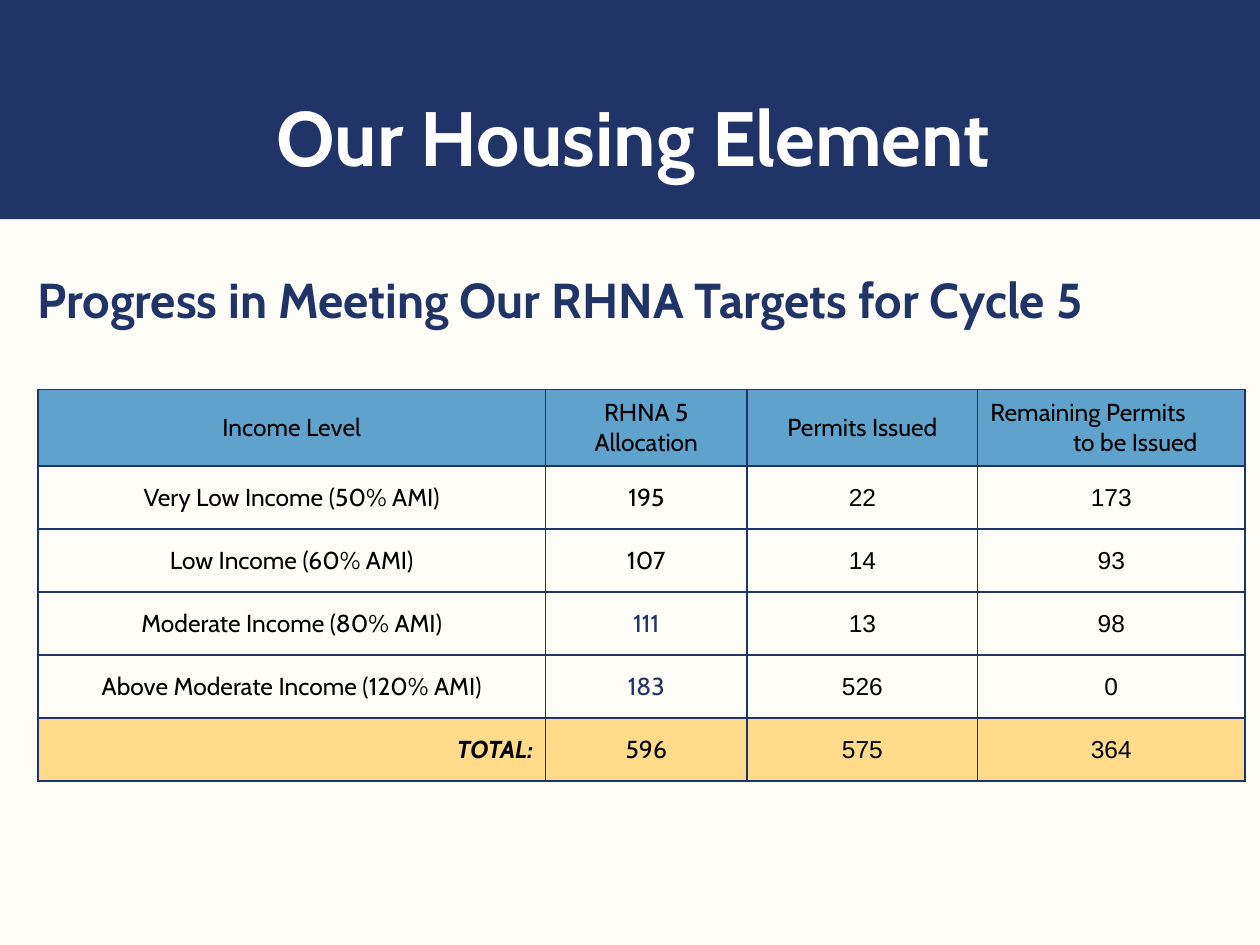
from dataclasses import dataclass

from lxml import etree
from pptx import Presentation
from pptx import util as u
from pptx.dml.color import RGBColor
from pptx.enum import shapes, text
from pptx.oxml import ns

NAVY, CREAM, WHITE, BLACK = "203468", "FFFDF7", "FFFFFF", "000000"
BLUE, YELLOW = "5FA3CC", "FFDB8A"
LEFT, CENTER, RIGHT = (text.PP_ALIGN.LEFT, text.PP_ALIGN.CENTER,
                       text.PP_ALIGN.RIGHT)


@dataclass
class Line:
    words: str
    size: float = 14
    font: str = "Cabin"
    color: str = BLACK
    bold: bool = False
    italic: bool = False
    align: text.PP_ALIGN = CENTER
    spacing: float = 1.0
    indent: float = 0


@dataclass
class Box:
    left: float
    top: float
    width: float
    height: float
    line: Line
    anchor: text.MSO_ANCHOR = text.MSO_ANCHOR.TOP
    right_inset: float = 0.1


@dataclass
class Row:
    label: Line
    allocation: Line
    issued: str
    remaining: str
    fill: str = ""


def color(value: str) -> RGBColor:
    return RGBColor.from_string(value)


def write(frame, lines: list[Line]) -> None:
    for index, line in enumerate(lines):
        paragraph = frame.paragraphs[0] if index == 0 else frame.add_paragraph()
        if line.indent:
            paragraph._p.get_or_add_pPr().set("marL", str(u.Inches(line.indent)))
        paragraph.alignment = line.align
        paragraph.line_spacing = line.spacing
        run = paragraph.add_run()
        run.text = line.words
        formats = {"name": line.font, "size": u.Pt(line.size),
                   "bold": line.bold, "italic": line.italic}
        for name, value in formats.items():
            setattr(run.font, name, value)
        run.font.color.rgb = color(line.color)


def add_text(slide, box: Box) -> None:
    shape = slide.shapes.add_textbox(*map(
        u.Inches, (box.left, box.top, box.width, box.height)))
    frame = shape.text_frame
    frame.word_wrap = True
    frame.vertical_anchor = box.anchor
    frame.margin_right = u.Inches(box.right_inset)
    write(frame, [box.line])


def add_borders(cell) -> None:
    properties = cell._tc.get_or_add_tcPr()
    for position, side in enumerate(("lnL", "lnR", "lnT", "lnB")):
        border = etree.Element(ns.qn(f"a:{side}"), w=str(u.Pt(1)))
        fill = etree.SubElement(border, ns.qn("a:solidFill"))
        etree.SubElement(fill, ns.qn("a:srgbClr"), val=NAVY)
        properties.insert(position, border)


def fill_cell(cell, lines: list[Line], fill: str) -> None:
    cell.vertical_anchor = text.MSO_ANCHOR.MIDDLE
    write(cell.text_frame, lines)
    if fill:
        cell.fill.solid()
        cell.fill.fore_color.rgb = color(fill)
    else:
        cell.fill.background()
    add_borders(cell)


def add_progress_table(slide, header: list[list[Line]], rows: list[Row]) -> None:
    widths = [4.03, 1.6, 1.83, 2.12]
    heights = [0.61] + [0.5] * len(rows)
    table = slide.shapes.add_table(
        len(heights), len(widths), u.Inches(0.3), u.Inches(3.09),
        u.Inches(sum(widths)), u.Inches(sum(heights))).table
    for column, width in zip(table.columns, widths):
        column.width = u.Inches(width)
    for row, height in zip(table.rows, heights):
        row.height = u.Inches(height)

    for index, lines in enumerate(header):
        fill_cell(table.cell(0, index), lines, BLUE)
    for number, row in enumerate(rows, start=1):
        entries = [row.label, row.allocation,
                   Line(row.issued, font="Arial"), Line(row.remaining, font="Arial")]
        for index, entry in enumerate(entries):
            fill_cell(table.cell(number, index), [entry], row.fill)


TITLE = Box(0.45, 0.33, 9.31, 1.17,
            Line("Our Housing Element", 44, color=WHITE, bold=True, spacing=0.9),
            text.MSO_ANCHOR.BOTTOM, right_inset=0.25)
SUBTITLE = Box(0.2, 2.14, 9.8, 4.78,
               Line("Progress in Meeting Our RHNA Targets for Cycle 5", 28,
                    color=NAVY, bold=True, align=LEFT, spacing=0.9))
HEADER = [
    [Line("Income Level")],
    [Line("RHNA 5"), Line("Allocation")],
    [Line("Permits Issued")],
    [Line("Remaining Permits", align=LEFT), Line("to be Issued", indent=0.38)],
]
ROWS = [
    Row(Line("Very Low Income (50% AMI)"), Line("195"), "22", "173"),
    Row(Line("Low Income (60% AMI)"), Line("107"), "14", "93"),
    Row(Line("Moderate Income (80% AMI)"), Line("111", color=NAVY), "13", "98"),
    Row(Line("Above Moderate Income (120% AMI)"), Line("183", color=NAVY),
        "526", "0"),
    Row(Line("TOTAL:", bold=True, italic=True, align=RIGHT), Line("596"),
        "575", "364", YELLOW),
]


def main() -> None:
    presentation = Presentation()
    presentation.slide_width = u.Inches(10)
    presentation.slide_height = u.Inches(7.5)
    slide = presentation.slides.add_slide(presentation.slide_layouts[6])
    slide.background.fill.solid()
    slide.background.fill.fore_color.rgb = color(CREAM)

    # Title band
    band = slide.shapes.add_shape(shapes.MSO_SHAPE.RECTANGLE, 0, 0,
                                  u.Inches(10), u.Inches(1.74))
    band.shadow.inherit = False
    band.fill.solid()
    band.fill.fore_color.rgb = color(NAVY)
    band.line.fill.background()

    # Headings
    for box in (SUBTITLE, TITLE):
        add_text(slide, box)

    # Permit progress by income level
    add_progress_table(slide, HEADER, ROWS)
    presentation.save("out.pptx")


if __name__ == "__main__":
    main()
